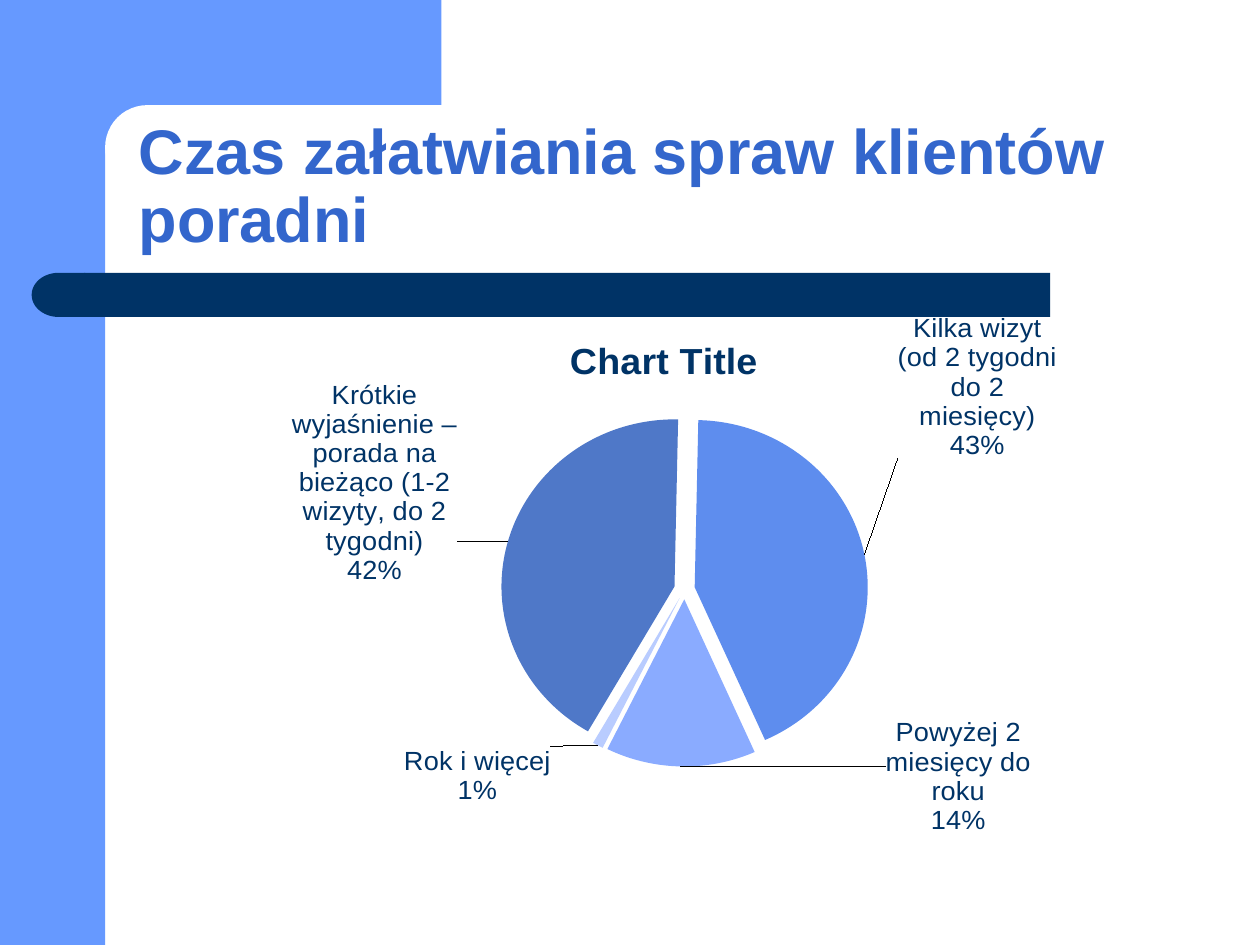
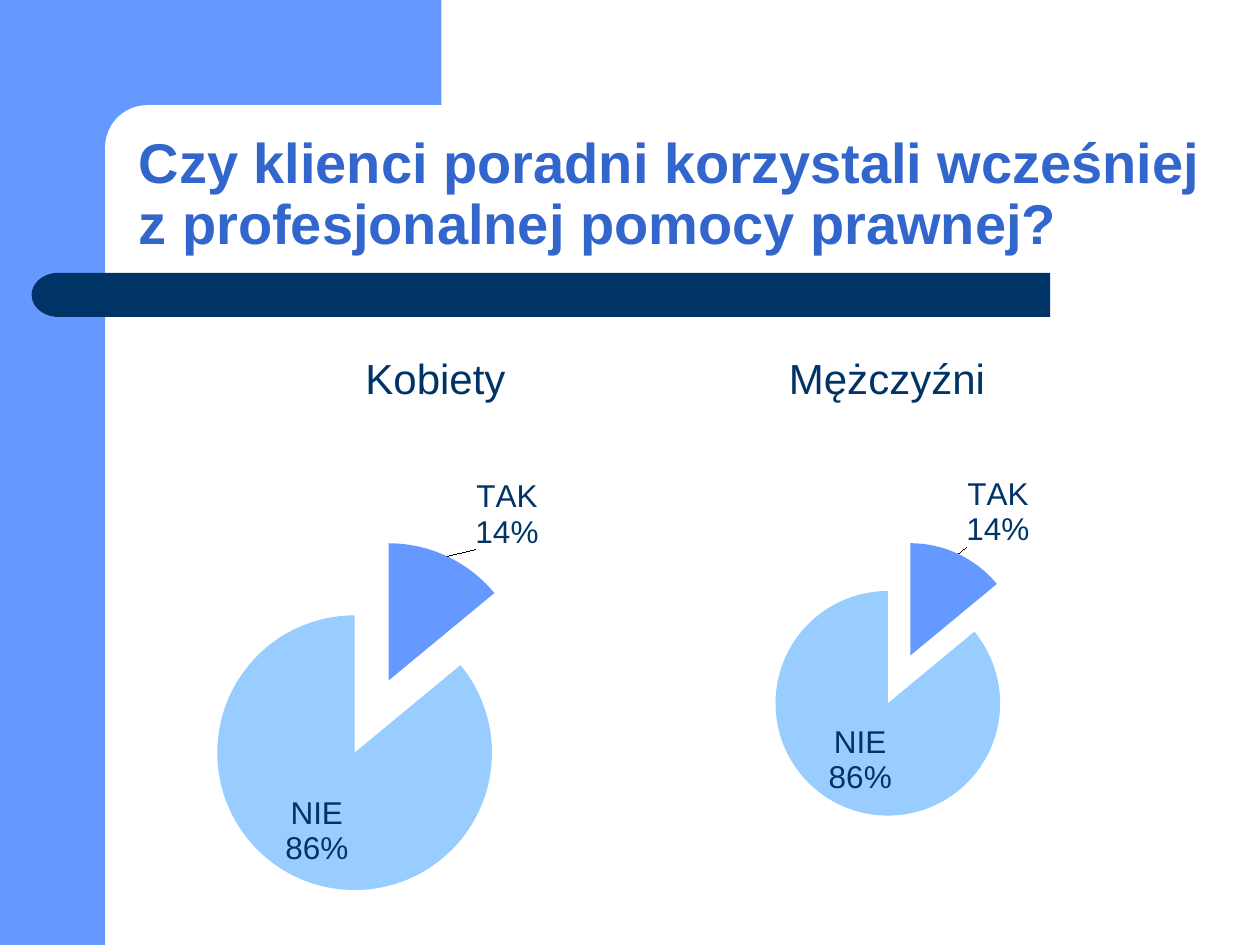
import pptx
import pptx.chart.data
import pptx.dml.color
import pptx.enum.chart
import pptx.enum.shapes
import pptx.enum.text
import pptx.oxml
import pptx.oxml.ns
import pptx.util
from pptx.util import Cm, Pt

RGBColor = pptx.dml.color.RGBColor
Shape = pptx.enum.shapes.MSO_SHAPE
qn = pptx.oxml.ns.qn

SKY = RGBColor(0x66, 0x99, 0xFF)
PALE_SKY = RGBColor(0x99, 0xCC, 0xFF)
NAVY = RGBColor(0x00, 0x33, 0x66)
TITLE_BLUE = RGBColor(0x33, 0x66, 0xCC)
WHITE = RGBColor(0xFF, 0xFF, 0xFF)
DEEP_BLUE = RGBColor(0x4F, 0x78, 0xC8)
MID_BLUE = RGBColor(0x5E, 0x8D, 0xEE)
SOFT_BLUE = RGBColor(0x8A, 0xAB, 0xFF)
MIST_BLUE = RGBColor(0xB9, 0xCC, 0xFF)
FONT = "Arial"

# Shared frame: shape kind, (left, top, width, height) in cm, colour, flipped
FRAME = [
    (Shape.RECTANGLE, (0, 0, 2.12, 19.05), SKY, False),
    (Shape.RECTANGLE, (1.9, 0, 7, 2.96), SKY, False),
    (Shape.ROUNDED_RECTANGLE, (2.12, 2.12, 14.18, 1.7), WHITE, False),
    (Shape.RECTANGLE, (1.7, 5.5, 19.47, 0.89), NAVY, False),
    (Shape.FLOWCHART_DELAY, (0.64, 5.5, 1.08, 0.89), NAVY, True),
]
TITLE_AREA = (2.54, 2.12, 22.23, 3.18)

# Slices: category, value, colour, explosion, label position, label shift
# Plot and shifts are fractions of the chart area
SLIDES = [
    {
        "title": "Czas załatwiania spraw klientów poradni",
        "title_size": 36,
        "captions": [],
        "charts": [{
            "area": (4.7, 6.32, 17.5, 11.63),
            "plot": (0.27, 0.12, 0.5, 0.75),
            "title": "Chart Title", "size": 15.5, "start": 210, "explosion": 25,
            "slices": [
                ("Krótkie wyjaśnienie – porada na bieżąco (1-2 wizyty, do 2 tygodni)",
                 42, DEEP_BLUE, 6, "outEnd", (-0.05, 0.08)),
                ("Kilka wizyt (od 2 tygodni do 2 miesięcy)",
                 43, MID_BLUE, 6, "outEnd", (0.03, -0.17)),
                ("Powyżej 2 miesięcy do roku",
                 14, SOFT_BLUE, 6, "outEnd", (0.32, -0.1)),
                ("Rok i więcej", 1, MIST_BLUE, 6, "outEnd", (-0.05, -0.01)),
            ],
        }],
    },
    {
        "title": "Czy klienci poradni korzystali wcześniej z profesjonalnej pomocy prawnej?",
        "title_size": 32,
        "captions": [("Kobiety", (4.65, 6.99, 8.26, 1.27)),
                     ("Mężczyźni", (14.17, 6.99, 7.42, 1.27))],
        "charts": [
            {
                "area": (2.49, 9.12, 10.21, 9.19),
                "plot": (0.14, 0.19, 0.7, 0.78),
                "title": None, "size": 18, "start": 0, "explosion": 29,
                "slices": [("TAK", 14, SKY, 29, "outEnd", (0.05, 0)),
                           ("NIE", 86, PALE_SKY, 29, "bestFit", None)],
            },
            {
                "area": (12.9, 9.12, 10.41, 9.19),
                "plot": (0.21, 0.19, 0.57, 0.65),
                "title": None, "size": 18, "start": 0, "explosion": 31,
                "slices": [("TAK", 14, SKY, 31, "outEnd", (0.01, 0)),
                           ("NIE", 86, PALE_SKY, 16, "bestFit", None)],
            },
        ],
    },
]


def lengths(area):
    return [Cm(value) for value in area]


def chart_xml(tag, content="", attributes=""):
    namespace = pptx.oxml.ns.nsdecls("c")
    return pptx.oxml.parse_xml(f"<c:{tag} {namespace} {attributes}>{content}</c:{tag}>")


def value_element(tag, value):
    return chart_xml(tag, attributes=f'val="{value}"')


def layout_content(values, edge=False, inner=False):
    parts = ['<c:layoutTarget val="inner"/>'] if inner else []
    if edge:
        parts += ['<c:xMode val="edge"/>', '<c:yMode val="edge"/>']
    parts += [f'<c:{name} val="{value}"/>' for name, value in zip("xywh", values)]
    return "<c:manualLayout>" + "".join(parts) + "</c:manualLayout>"


def style_font(font, size, colour, bold=False):
    font.name, font.size, font.bold = FONT, Pt(size), bold
    font.color.rgb = colour


def add_frame(slide):
    for kind, area, colour, flipped in FRAME:
        shape = slide.shapes.add_shape(kind, *lengths(area))
        shape.shadow.inherit = False
        shape.fill.solid()
        shape.fill.fore_color.rgb = colour
        shape.line.fill.background()
        if kind == Shape.ROUNDED_RECTANGLE:
            shape.adjustments[0] = 0.5
        if flipped:
            shape._element.spPr.find(qn("a:xfrm")).set("flipH", "1")


def set_title(slide, text, size):
    title = slide.shapes.title
    title.left, title.top, title.width, title.height = lengths(TITLE_AREA)
    frame = title.text_frame
    frame.text = text
    frame.word_wrap = True
    frame.auto_size = pptx.enum.text.MSO_AUTO_SIZE.NONE
    frame.vertical_anchor = pptx.enum.text.MSO_ANCHOR.BOTTOM
    para = frame.paragraphs[0]
    para.alignment = pptx.enum.text.PP_ALIGN.LEFT
    para.line_spacing = 0.9
    style_font(para.runs[0].font, size, TITLE_BLUE, bold=True)
    # Bring the title in front of the frame
    slide.shapes._spTree.append(title._element)


def add_caption(slide, text, area):
    frame = slide.shapes.add_textbox(*lengths(area)).text_frame
    frame.word_wrap = True
    frame.text = text
    para = frame.paragraphs[0]
    para.alignment = pptx.enum.text.PP_ALIGN.CENTER
    style_font(para.runs[0].font, 24, NAVY)


def pie_labels(slices):
    number_format = '<c:numFmt formatCode="0%" sourceLinked="0"/>'
    shown = "".join(
        f'<c:{name} val="{int(name in ("showCatName", "showPercent"))}"/>'
        for name in ("showLegendKey", "showVal", "showCatName",
                     "showSerName", "showPercent", "showBubbleSize"))
    shown += "<c:separator>\n</c:separator>"
    labels = ""
    for index, (*_, position, shift) in enumerate(slices):
        layout = f"<c:layout>{layout_content(shift)}</c:layout>" if shift else ""
        labels += (f'<c:dLbl><c:idx val="{index}"/>{layout}{number_format}'
                   f'<c:dLblPos val="{position}"/>{shown}</c:dLbl>')
    return chart_xml("dLbls", labels + number_format + shown
                     + '<c:showLeaderLines val="1"/>')


def add_pie(slide, pie):
    slices = pie["slices"]
    data = pptx.chart.data.CategoryChartData(number_format="General")
    data.categories = [item[0] for item in slices]
    data.add_series("Series 1", [item[1] for item in slices])
    chart = slide.shapes.add_chart(
        pptx.enum.chart.XL_CHART_TYPE.PIE, *lengths(pie["area"]), data).chart
    chart.has_legend = False
    style_font(chart.font, pie["size"], NAVY)

    # Chart title
    chart.has_title = pie["title"] is not None
    if chart.has_title:
        frame = chart.chart_title.text_frame
        frame.text = pie["title"]
        style_font(frame.paragraphs[0].runs[0].font, 21.5, NAVY, bold=True)
        title = chart.chart_title._element
        for old in title.findall(qn("c:layout")):
            title.remove(old)
        title.find(qn("c:tx")).addnext(
            chart_xml("layout", layout_content((0.38, 0.03), edge=True)))

    # Plot area and first slice angle
    plot = chart.plots[0]
    plot.vary_by_categories = True
    plot_area = plot._element.getparent()
    for old in plot_area.findall(qn("c:layout")):
        plot_area.remove(old)
    plot_area.insert(0, chart_xml(
        "layout", layout_content(pie["plot"], edge=True, inner=True)))
    for old in plot._element.findall(qn("c:firstSliceAng")):
        plot._element.remove(old)
    plot._element.append(value_element("firstSliceAng", pie["start"]))

    # Slices and their labels
    series = plot.series[0]
    for index, (_, _, colour, explosion, _, _) in enumerate(slices):
        point = series.points[index]
        point.format.fill.solid()
        point.format.fill.fore_color.rgb = colour
        point.format.line.fill.background()
        properties = point.format.fill._xPr
        properties.addprevious(value_element("explosion", explosion))
    element = series._element
    element.find(qn("c:tx")).addnext(value_element("explosion", pie["explosion"]))
    element.find(qn("c:cat")).addprevious(pie_labels(slices))


def main():
    deck = pptx.Presentation()
    deck.slide_width, deck.slide_height = Cm(25.4), Cm(19.05)
    for content in SLIDES:
        page = deck.slides.add_slide(deck.slide_layouts.get_by_name("Title Only"))
        add_frame(page)
        set_title(page, content["title"], content["title_size"])
        for text, area in content["captions"]:
            add_caption(page, text, area)
        for pie in content["charts"]:
            add_pie(page, pie)
    deck.save("out.pptx")


if __name__ == "__main__":
    main()
